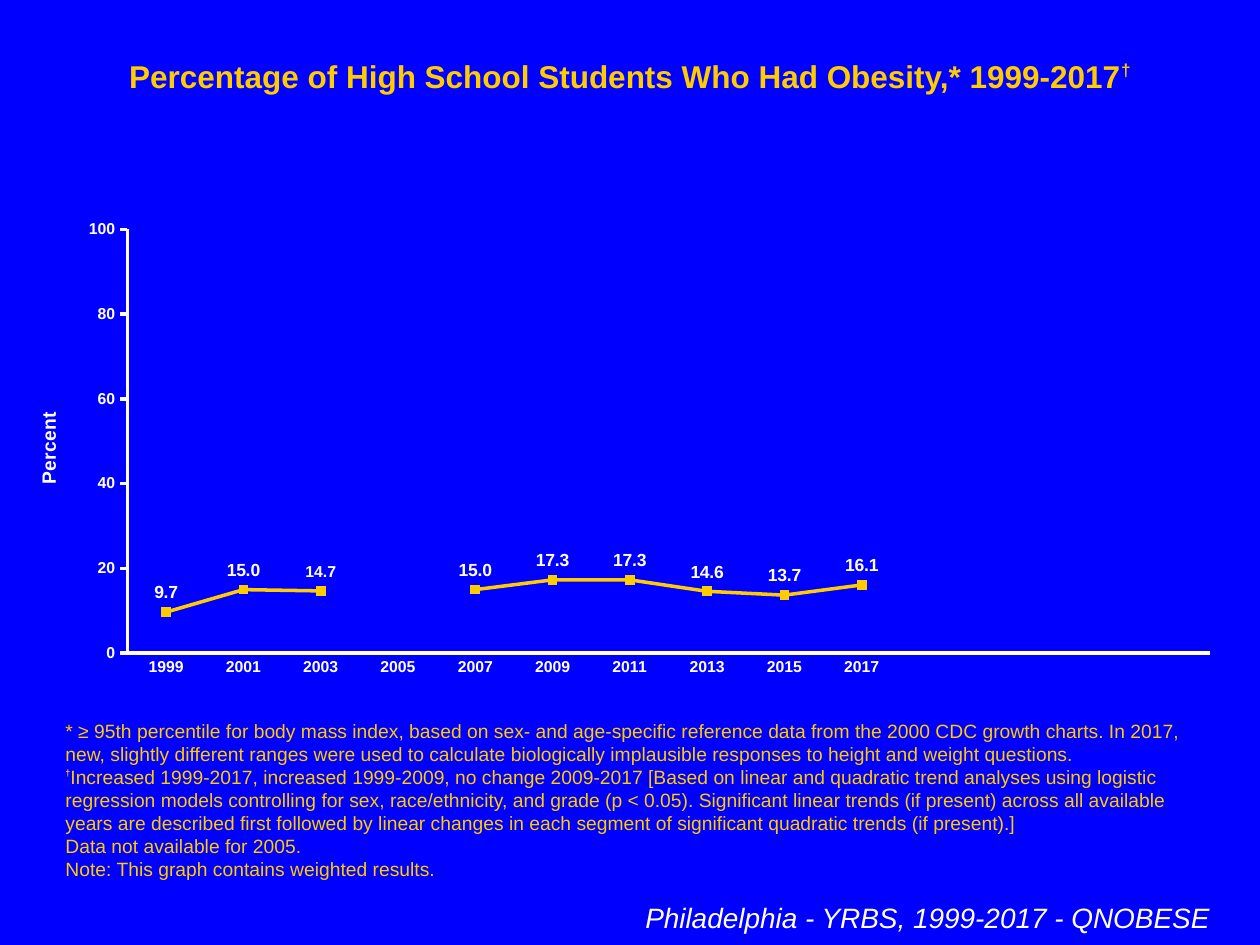
import pptx
import pptx.chart.data
import pptx.dml.color
import pptx.enum.chart
import pptx.enum.text
import pptx.oxml
import pptx.util

Cm = pptx.util.Cm
Pt = pptx.util.Pt
enum = pptx.enum.chart
GOLD, WHITE, BLUE = "FFCC00", "FFFFFF", "0000FF"


def hue(code):
    return pptx.dml.color.RGBColor.from_string(code)


def style(font, size, code, **more):
    for key, value in {"name": "Arial", "size": Pt(size), **more}.items():
        setattr(font, key, value)
    font.color.rgb = hue(code)


deck = pptx.Presentation()
deck.slide_width, deck.slide_height = Cm(25.4), Cm(19.05)
slide = deck.slides.add_slide(deck.slide_layouts[6])
slide.background.fill.solid()
slide.background.fill.fore_color.rgb = hue(BLUE)

data = pptx.chart.data.CategoryChartData(number_format="#,##0.0")
data.categories = [str(year) for year in range(1999, 2018, 2)] + [""] * 4
data.add_series(
    "Series 1",
    [9.7, 15, 14.7, None, 15, 17.3, 17.3, 14.6, 13.7, 16.1] + [None] * 4,
)
chart = slide.shapes.add_chart(
    enum.XL_CHART_TYPE.LINE_MARKERS, Cm(0.64), Cm(4.24), Cm(24.13), Cm(10.16), data
).chart
style(chart.font, 18, WHITE)
chart.has_legend = False
chart.has_title = False

axes = [
    (chart.category_axis, {"major_tick_mark": enum.XL_TICK_MARK.NONE}),
    (chart.value_axis, {
        "major_tick_mark": enum.XL_TICK_MARK.OUTSIDE,
        "minimum_scale": 0,
        "maximum_scale": 100,
        "major_unit": 20,
    }),
]
for axis, form in axes:
    form = {**form, "has_major_gridlines": False, "minor_tick_mark": enum.XL_TICK_MARK.NONE}
    for key, value in form.items():
        setattr(axis, key, value)
    style(axis.tick_labels.font, 9, WHITE, bold=True)
    axis.format.line.color.rgb = hue(WHITE)
    axis.format.line.width = Pt(2)
chart.value_axis.tick_labels.number_format = "#,##0"
chart.value_axis.tick_labels.number_format_is_linked = False
head = chart.value_axis.axis_title.text_frame.paragraphs[0].add_run()
head.text = "Percent"
style(head.font, 11, WHITE, bold=True)

plot = chart.plots[0]
plot.vary_by_categories = False
line = plot.series[0]
line.smooth = False
line.format.line.color.rgb = hue(GOLD)
line.format.line.width = Pt(2)
line.marker.style = enum.XL_MARKER_STYLE.SQUARE
line.marker.size = 5
line.marker.format.fill.solid()
line.marker.format.fill.fore_color.rgb = hue(GOLD)
line.marker.format.line.color.rgb = hue(GOLD)

above = enum.XL_LABEL_POSITION.ABOVE
small = line.points[2].data_label
style(small.font, 9, WHITE, bold=True)
small.position = above
marks = line.data_labels
form = {
    "show_value": True,
    "position": above,
    "number_format": "#,##0.0",
    "number_format_is_linked": False,
}
for key, value in form.items():
    setattr(marks, key, value)
style(marks.font, 10, WHITE, bold=True)

area = chart._chartSpace.chart.plotArea
for old in area.findall(pptx.oxml.ns.qn("c:layout")):
    area.remove(old)
parts = {
    "layoutTarget": "inner", "xMode": "edge", "yMode": "edge",
    "x": 0.08, "y": 0.038, "w": 0.904, "h": 0.841,
}
inner = "".join(f'<c:{key} val="{value}"/>' for key, value in parts.items())
area.insert(0, pptx.oxml.parse_xml(
    f'<c:layout {pptx.oxml.ns.nsdecls("c")}><c:manualLayout>{inner}</c:manualLayout></c:layout>'
))

align = pptx.enum.text.PP_ALIGN
anchor = pptx.enum.text.MSO_ANCHOR
title = {"size": 18, "code": GOLD, "bold": True}
note = {"size": 11, "code": GOLD}
foot = {"size": 16, "code": WHITE, "italic": True}
texts = [
    ((1.27, 1.02, 22.86, 1.02), align.CENTER, anchor.TOP, [[
        ("Percentage of High School Students Who Had Obesity,* 1999-2017", title, 0),
        ("†", {**title, "size": 17}, 40),
    ]]),
    ((1.07, 14.36, 23.29, 3.52), align.LEFT, anchor.BOTTOM, [
        [("* ≥ 95th percentile for body mass index, based on sex- and age-specific "
          "reference data from the 2000 CDC growth charts. In 2017, new, slightly "
          "different ranges were used to calculate biologically implausible responses "
          "to height and weight questions.", note, 0)],
        [("†", {**note, "size": 9, "bold": True}, 50),
         ("Increased 1999-2017, increased 1999-2009, no change 2009-2017 [Based on "
          "linear and quadratic trend analyses using logistic regression models "
          "controlling for sex, race/ethnicity, and grade (p < 0.05). Significant "
          "linear trends (if present) across all available years are described first "
          "followed by linear changes in each segment of significant quadratic trends "
          "(if present).]", note, 0)],
        [("Data not available for 2005.", note, 0)],
        [("Note: This graph contains weighted results.", note, 0)],
    ]),
    ((1.07, 18.03, 23.57, 0.94), align.RIGHT, anchor.TOP,
     [[("Philadelphia - YRBS, 1999-2017 - QNOBESE", foot, 0)]]),
]
for place, side, hold, paras in texts:
    frame = slide.shapes.add_textbox(*map(Cm, place)).text_frame
    frame.word_wrap = True
    frame.vertical_anchor = hold
    for at, runs in enumerate(paras):
        para = frame.add_paragraph() if at else frame.paragraphs[0]
        para.alignment = side
        for words, form, lift in runs:
            run = para.add_run()
            run.text = words
            style(run.font, **form)
            if lift:
                run.font._element.set("baseline", str(lift * 1000))

deck.save("out.pptx")
